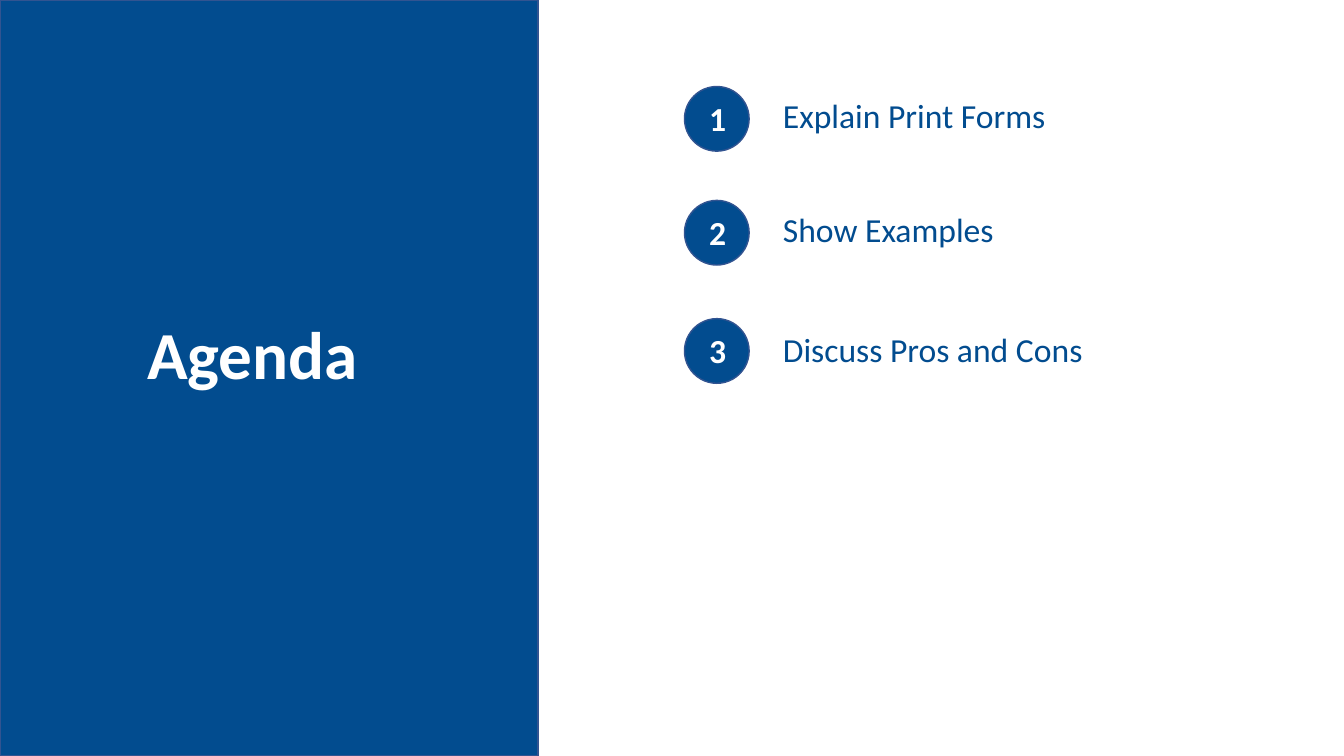
"""Build the agenda slide: a title panel beside numbered topics."""
import dataclasses

import pptx
import pptx.dml.color
import pptx.enum.shapes
import pptx.enum.text
import pptx.slide
import pptx.util
from pptx.util import Cm

NAVY = pptx.dml.color.RGBColor(0x02, 0x4C, 0x8F)
EDGE = pptx.dml.color.RGBColor(0x32, 0x54, 0x91)
WHITE = pptx.dml.color.RGBColor(0xFF, 0xFF, 0xFF)
SHAPES = pptx.enum.shapes.MSO_SHAPE
FONT = "Calibri"

CIRCLE_LEFT = 17.25
CIRCLE_SIZE = 1.63
NUMBER_LEFT = 17.62
NUMBER_DROP = 0.16
NUMBER_WIDTH = 0.89
LABEL_LEFT = 19.48
LINE_HEIGHT = 1.27


@dataclasses.dataclass(frozen=True)
class Topic:
    label: str
    circle_top: float
    label_top: float
    label_width: float


TOPICS = (
    Topic("Explain Print Forms", 2.18, 2.26, 13.56),
    Topic("Show Examples", 5.05, 5.13, 9.86),
    Topic("Discuss Pros and Cons", 8.03, 8.16, 8.26),
)


def add_filled(page: pptx.slide.Slide, kind: SHAPES, left: float, top: float,
               width: float, height: float) -> None:
    shape = page.shapes.add_shape(kind, Cm(left), Cm(top), Cm(width), Cm(height))
    shape.shadow.inherit = False
    shape.fill.solid()
    shape.fill.fore_color.rgb = NAVY
    shape.line.color.rgb = EDGE
    shape.line.width = pptx.util.Pt(1)


def add_text(page: pptx.slide.Slide, text: str, *, left: float, top: float,
             width: float, height: float = LINE_HEIGHT, size: float = 24,
             color: pptx.dml.color.RGBColor = WHITE, bold: bool = False) -> None:
    box = page.shapes.add_textbox(Cm(left), Cm(top), Cm(width), Cm(height))
    box.text_frame.word_wrap = True
    box.text_frame.auto_size = pptx.enum.text.MSO_AUTO_SIZE.SHAPE_TO_FIT_TEXT
    span = box.text_frame.paragraphs[0].add_run()
    span.text = text
    span.font.name = FONT
    span.font.size = pptx.util.Pt(size)
    span.font.bold = bold
    span.font.color.rgb = color


def add_topic(page: pptx.slide.Slide, number: int, topic: Topic) -> None:
    add_filled(page, SHAPES.OVAL, CIRCLE_LEFT, topic.circle_top,
               CIRCLE_SIZE, CIRCLE_SIZE)
    add_text(page, str(number), left=NUMBER_LEFT,
             top=topic.circle_top + NUMBER_DROP, width=NUMBER_WIDTH, bold=True)
    add_text(page, topic.label, left=LABEL_LEFT, top=topic.label_top,
             width=topic.label_width, color=NAVY)


def main() -> None:
    deck = pptx.Presentation()
    deck.slide_width, deck.slide_height = Cm(33.87), Cm(19.05)
    page = deck.slides.add_slide(deck.slide_layouts[6])
    add_filled(page, SHAPES.RECTANGLE, 0, 0, 13.56, 19.05)
    add_text(page, "Agenda", left=3.46, top=7.75, width=7.67, height=2.31,
             size=48, bold=True)
    for number, topic in enumerate(TOPICS, start=1):
        add_topic(page, number, topic)
    deck.save("out.pptx")


if __name__ == "__main__":
    main()
